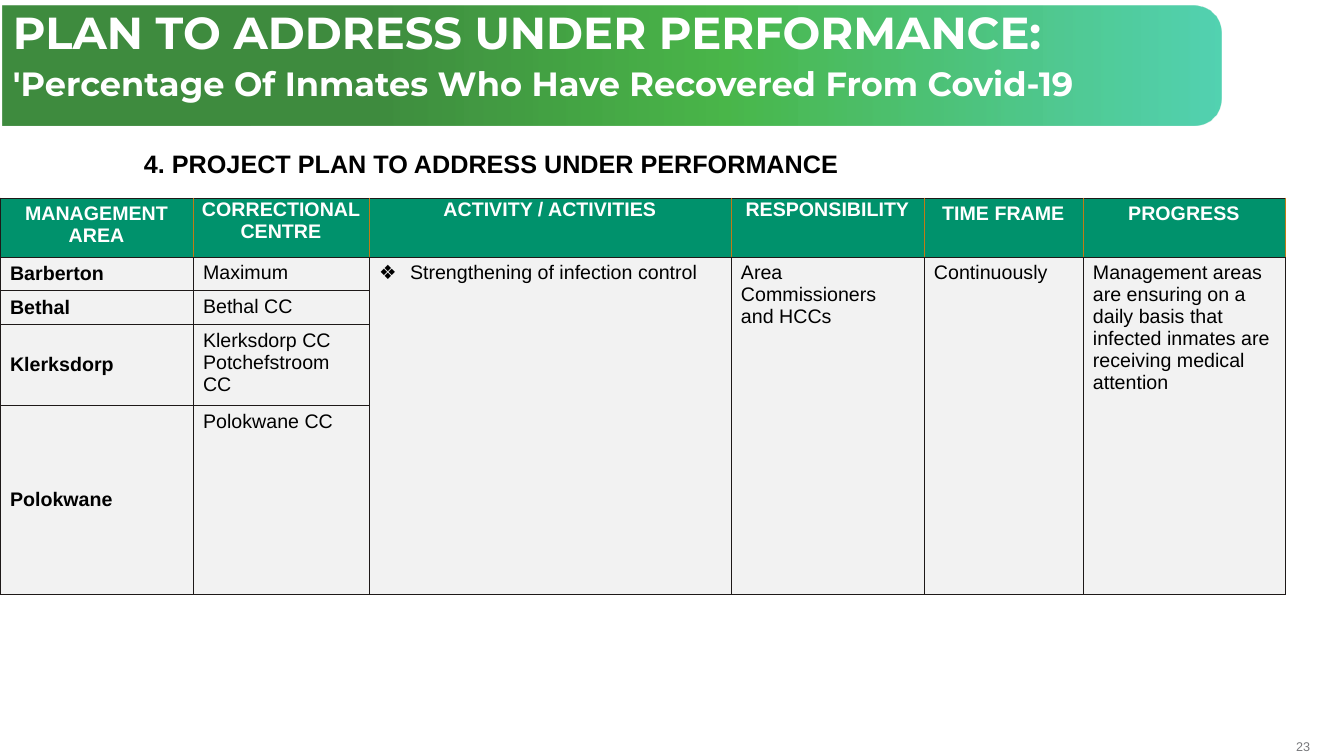
from lxml.etree import SubElement
from pptx import Presentation
from pptx.dml.color import RGBColor
from pptx.enum.shapes import MSO_SHAPE
from pptx.enum.text import MSO_ANCHOR, PP_ALIGN
from pptx.oxml import parse_xml
from pptx.oxml.ns import nsdecls, qn
from pptx.util import Pt

EMU_PER_PX = 914400 / 100.8
COLORS = {
    "white": "FFFFFF", "black": "000000", "gray": "77787B",
    "header": "00926C", "body": "F2F2F2", "border": "1E1918", "divider": "BF7B17",
    "dark_green": "006600", "green": "009900", "teal": "00BC8D",
}


def px(*lengths):
    return [round(length * EMU_PER_PX) for length in lengths]


def format_text(para, size, color, bold=False, font="Arial"):
    for span in para.runs:
        span.font.name = font
        span.font.size = Pt(size)
        span.font.bold = bold
        span.font.color.rgb = RGBColor.from_string(COLORS[color])


deck = Presentation()
deck.slide_width, deck.slide_height = px(1344, 756)
page = deck.slides.add_slide(deck.slide_layouts[6])

number_box = page.shapes.add_textbox(*px(1271, 739, 39, 15))
frame = number_box.text_frame
frame.word_wrap = True
frame.vertical_anchor = MSO_ANCHOR.MIDDLE
frame.margin_left = frame.margin_top = frame.margin_right = frame.margin_bottom = 0
frame.text = "23"
frame.paragraphs[0].alignment = PP_ALIGN.RIGHT
format_text(frame.paragraphs[0], 9, "gray")

banner = page.shapes.add_shape(MSO_SHAPE.ROUND_2_SAME_RECTANGLE, *px(552, -543, 120, 1218))
banner.rotation = 90
banner.adjustments[0] = 0.233
banner.adjustments[1] = 0
banner.shadow.inherit = False
banner.line.fill.background()
banner.fill.background()
stops = "".join(
    f'<a:gs pos="{place * 1000}"><a:srgbClr val="{COLORS[color]}">'
    f'<a:alpha val="{opacity * 1000}"/></a:srgbClr></a:gs>'
    for place, color, opacity in [(30, "dark_green", 75), (59, "green", 71), (100, "teal", 67)]
)
gradient = parse_xml(
    f'<a:gradFill {nsdecls("a")} rotWithShape="1"><a:gsLst>{stops}</a:gsLst>'
    '<a:lin ang="16200000" scaled="0"/></a:gradFill>'
)
properties = banner._element.spPr
properties.replace(properties.find(qn("a:noFill")), gradient)

heading_box = page.shapes.add_textbox(*px(134, 143, 849, 40))
heading_box.text_frame.word_wrap = True
heading_box.text_frame.text = "4. PROJECT PLAN TO ADDRESS UNDER PERFORMANCE"
format_text(heading_box.text_frame.paragraphs[0], 18, "black", True)

rows = [
    ["MANAGEMENT AREA", "CORRECTIONAL CENTRE", "ACTIVITY / ACTIVITIES",
     "RESPONSIBILITY", "TIME FRAME", "PROGRESS"],
    ["Barberton", "Maximum", "Strengthening of infection control",
     "Area Commissioners and HCCs", "Continuously",
     "Management areas are ensuring on a daily basis that infected inmates "
     "are receiving medical attention"],
    ["Bethal", "Bethal CC"],
    ["Klerksdorp", "Klerksdorp CC Potchefstroom CC"],
    ["Polokwane", "Polokwane CC"],
]
column_widths = px(193, 176, 362, 193, 159, 202)
row_heights = px(59, 33, 34, 81, 189)
table = page.shapes.add_table(
    len(row_heights), len(column_widths), *px(0, 198),
    sum(column_widths), sum(row_heights),
).table
table.first_row = table.horz_banding = False
for column, width in zip(table.columns, column_widths):
    column.width = width
for row, height in zip(table.rows, row_heights):
    row.height = height

last_column = len(column_widths) - 1
for r in range(len(row_heights)):
    for c in range(len(column_widths)):
        cell = table.cell(r, c)
        is_header = r == 0
        cell_properties = cell._tc.get_or_add_tcPr()
        for side in "LRTB":
            is_divider = is_header and (side == "R" or side == "L" and c > 0)
            line = SubElement(cell_properties, qn(f"a:ln{side}"), w=str(Pt(0.5)))
            fill = SubElement(line, qn("a:solidFill"))
            SubElement(fill, qn("a:srgbClr"), val=COLORS["divider" if is_divider else "border"])
        cell.fill.solid()
        cell.fill.fore_color.rgb = RGBColor.from_string(COLORS["header" if is_header else "body"])
        if c >= len(rows[r]):
            continue
        cell.text_frame.text = rows[r][c]
        para = cell.text_frame.paragraphs[0]
        format_text(para, 14, "white" if is_header else "black", is_header or c == 0)
        if is_header:
            para.alignment = PP_ALIGN.CENTER
            if 1 <= c <= 3:
                cell.margin_left, cell.margin_top, cell.margin_right, cell.margin_bottom = px(1, 1, 1, 0)
        elif c == 0:
            cell.vertical_anchor = MSO_ANCHOR.MIDDLE

for c in range(2, last_column + 1):
    table.cell(1, c).merge(table.cell(len(row_heights) - 1, c))

indent = px(31)[0]
bullet = table.cell(1, 2).text_frame.paragraphs[0]._p.get_or_add_pPr()
bullet.set("marL", str(indent))
bullet.set("indent", str(-indent))
SubElement(bullet, qn("a:buFont"), typeface="Arial")
SubElement(bullet, qn("a:buChar"), char="❖")

title_box = page.shapes.add_textbox(*px(3, 6, 1208, 57))
frame = title_box.text_frame
frame.word_wrap = True
frame.text = (
    "PLAN TO ADDRESS UNDER PERFORMANCE:\n"
    "'Percentage Of Inmates Who Have Recovered From Covid-19"
)
for para, size in zip(frame.paragraphs, [32, 24]):
    para.line_spacing = 0.9
    para.space_after = Pt(6)
    format_text(para, size, "white", True, "Montserrat")

deck.save("out.pptx")
